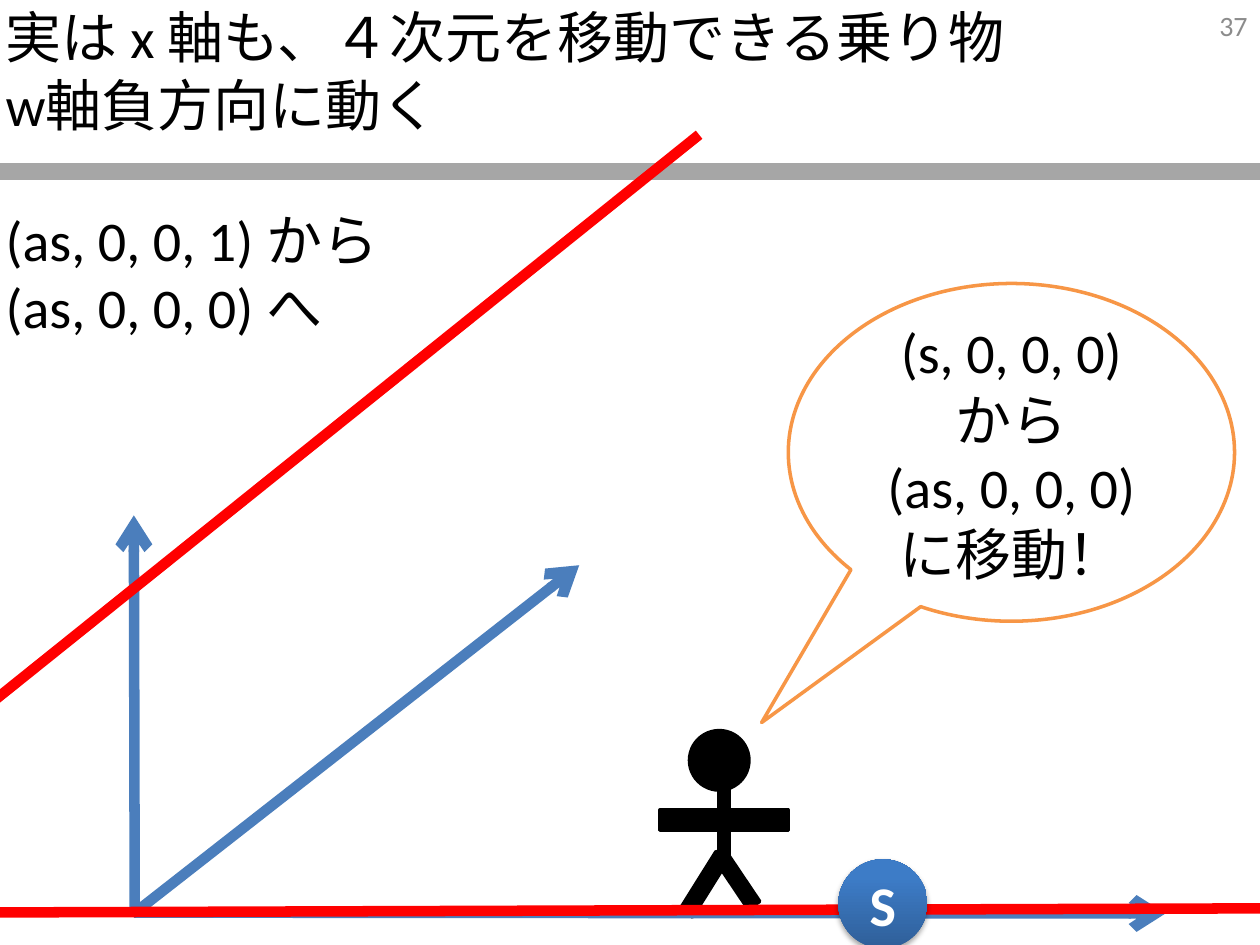
"""Build a slide on the x axis as a vehicle through four dimensions."""
from dataclasses import dataclass

from lxml import etree
from pptx import Presentation
from pptx.dml.color import RGBColor as Rgb
from pptx.enum import shapes as kinds, text as txt
from pptx.oxml import parse_xml
from pptx.oxml.ns import nsdecls, qn
from pptx.util import Pt


@dataclass
class Theme:
    font: str = "Calibri"
    size: int = 32
    small: int = 16
    black: Rgb = Rgb(0, 0, 0)
    white: Rgb = Rgb(255, 255, 255)
    gray: Rgb = Rgb(0x8C, 0x8C, 0x8C)
    rule: Rgb = Rgb(0xA6, 0xA6, 0xA6)
    blue: Rgb = Rgb(0x4B, 0x7E, 0xBC)
    red: Rgb = Rgb(255, 0, 0)
    orange: Rgb = Rgb(0xF7, 0x96, 0x46)
    dark: Rgb = Rgb(0x2F, 0x5F, 0x99)
    light: Rgb = Rgb(0x3D, 0x7C, 0xC7)


theme = Theme()


def write(para, lines, color, size=theme.size, align=None, bold=None):
    para.alignment = align
    for num, line in enumerate(lines):
        if num:
            para.add_line_break()
        run = para.add_run()
        run.text = line
        run.font.name = theme.font
        run.font.size = Pt(size)
        run.font.bold = bold
        run.font.color.rgb = color


def draw(start, end, color, width=6, arrow=False):
    line = slide.shapes.add_connector(
        kinds.MSO_CONNECTOR.STRAIGHT, *map(Pt, start + end))
    line.line.color.rgb = color
    line.line.width = Pt(width)
    if arrow:
        etree.SubElement(line.line._get_or_add_ln(), qn("a:tailEnd"), type="arrow")
    etree.SubElement(line._element.spPr, qn("a:effectLst"))


deck = Presentation()
deck.slide_width, deck.slide_height = Pt(720), Pt(540)
slide = deck.slides.add_slide(deck.slide_layouts[1])
title = slide.shapes.title._element
title.getparent().remove(title)

page = slide.shapes.add_textbox(Pt(552), Pt(0), Pt(168), Pt(29))
page.text_frame.word_wrap = True
page.text_frame.vertical_anchor = txt.MSO_ANCHOR.MIDDLE
write(page.text_frame.paragraphs[0], ["37"], theme.gray, theme.small,
      txt.PP_ALIGN.RIGHT)
draw((0, 98), (720, 98), theme.rule, 10)

body = slide.placeholders[1]
body.left, body.top, body.width, body.height = map(Pt, (-31, -2, 751, 356))
frame = body.text_frame
notes = [
    (["実は x 軸も、４次元を移動できる乗り物", "w軸負方向に動く"], 6),
    (["(as, 0, 0, 1) から", "(as, 0, 0, 0) へ"], 39),
]
for num, (lines, gap) in enumerate(notes):
    para = frame.add_paragraph() if num else frame.paragraphs[0]
    para.space_before = Pt(gap)
    props = para._p.get_or_add_pPr()
    props.set("marL", str(Pt(27)))
    props.set("indent", "0")
    etree.SubElement(props, qn("a:buNone"))
    write(para, lines, theme.black)

draw((76.5, 522), (331, 323), theme.blue, arrow=True)
draw((77, 522), (76.5, 294.5), theme.blue, arrow=True)
draw((-99.5, 477.5), (399.5, 77), theme.red)

shape = kinds.MSO_SHAPE
parts = [
    (shape.OVAL, 394, 417.5, 34, 34, 0),
    (shape.RECTANGLE, 411, 440.5, 6, 57, 0),
    (shape.RECTANGLE, 377, 463, 73.5, 11.5, 0),
    (shape.RECTANGLE, 383, 501, 39, 8.5, 302),
    (shape.RECTANGLE, 404, 499, 34.5, 8, 236.1),
]
man = slide.shapes.add_group_shape()
for kind, left, top, width, height, turn in parts:
    part = man.shapes.add_shape(kind, Pt(left), Pt(top), Pt(width), Pt(height))
    part.rotation = turn
    part.shadow.inherit = False
    part.fill.solid()
    part.fill.fore_color.rgb = part.line.color.rgb = theme.black
    part.line.width = Pt(2)

draw((76.5, 521.5), (666, 522), theme.blue, arrow=True)
draw((-31, 521.5), (740, 519), theme.red)

ball = slide.shapes.add_shape(shape.OVAL, Pt(479), Pt(491), Pt(51), Pt(51))
ball.fill.gradient()
ball.fill.gradient_angle = 90
for stop, spot, color in zip(ball.fill.gradient_stops, (0, 0.8),
                             (theme.dark, theme.light)):
    stop.position = spot
    stop.color.rgb = color
ball.line.fill.background()
ball._element.spPr.append(parse_xml(
    f'<a:effectLst {nsdecls("a")}><a:outerShdw blurRad="{Pt(3.1)}" '
    f'dist="{Pt(1.8)}" dir="5400000" rotWithShape="0"><a:srgbClr '
    f'val="{theme.black}"><a:alpha val="35000"/></a:srgbClr>'
    '</a:outerShdw></a:effectLst>'))
ball.text_frame.vertical_anchor = txt.MSO_ANCHOR.MIDDLE
write(ball.text_frame.paragraphs[0], ["S"], theme.white,
      align=txt.PP_ALIGN.CENTER, bold=True)

bubble = slide.shapes.add_shape(
    shape.OVAL_CALLOUT, Pt(450.5), Pt(162), Pt(255), Pt(193))
bubble.adjustments[0], bubble.adjustments[1] = -0.56, 0.8
bubble.shadow.inherit = False
bubble.fill.solid()
bubble.fill.fore_color.rgb = theme.white
bubble.line.color.rgb = theme.orange
bubble.line.width = Pt(2)
frame = bubble.text_frame
frame.word_wrap = True
frame.vertical_anchor = txt.MSO_ANCHOR.MIDDLE
speech = [["(s, 0, 0, 0)", "から"], ["(as, 0, 0, 0)", "に移動！"]]
for num, lines in enumerate(speech):
    para = frame.add_paragraph() if num else frame.paragraphs[0]
    write(para, lines, theme.black, align=txt.PP_ALIGN.CENTER)

deck.save("out.pptx")
